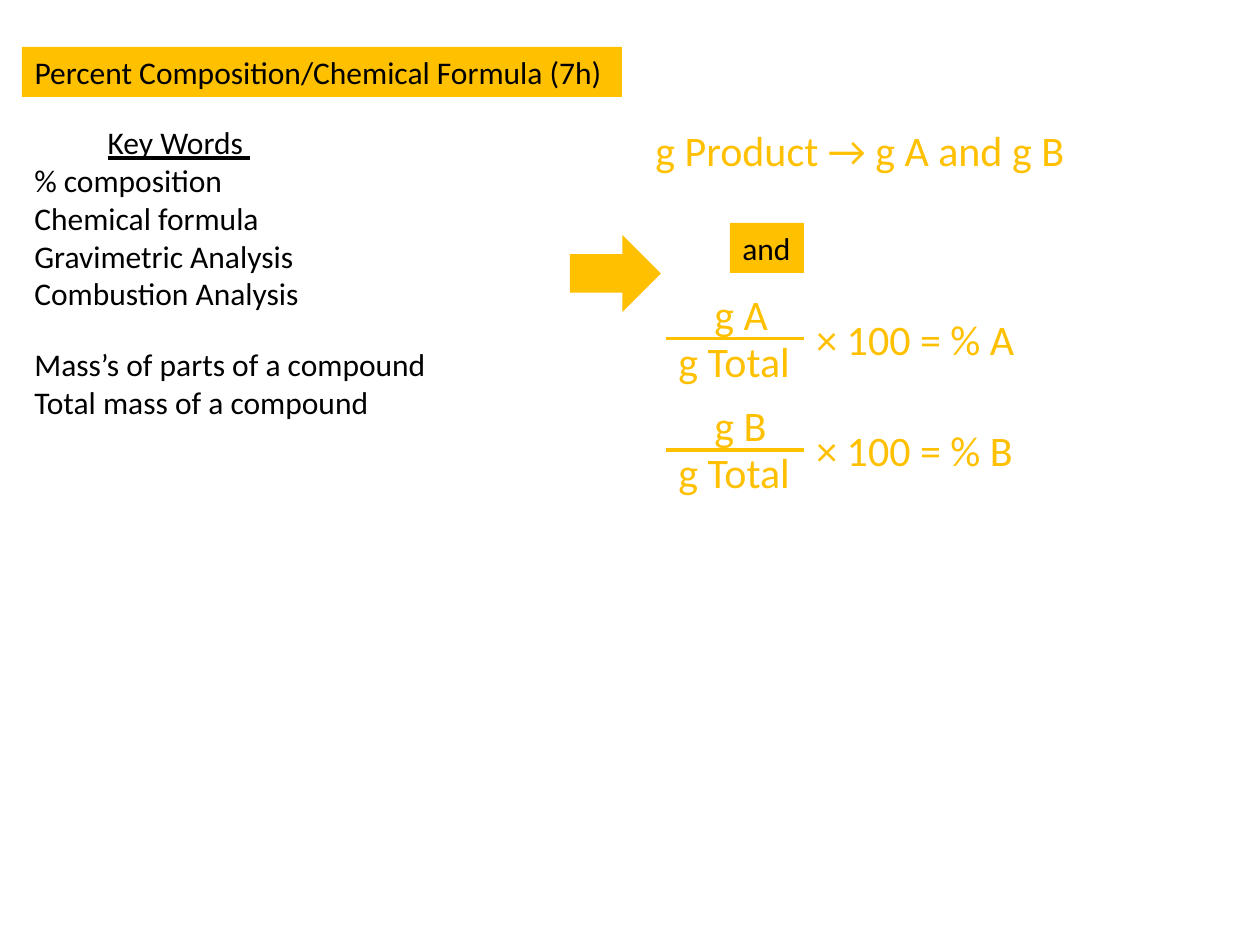
from dataclasses import dataclass

from lxml.etree import SubElement
from pptx import Presentation
from pptx.dml.color import RGBColor
from pptx.enum.shapes import MSO_CONNECTOR, MSO_SHAPE
from pptx.enum.text import MSO_ANCHOR, MSO_AUTO_SIZE, PP_ALIGN
from pptx.oxml.ns import qn
from pptx.shapes.autoshape import Shape
from pptx.slide import Slide
from pptx.util import Emu, Pt

PX_PER_INCH = 126


@dataclass(frozen=True)
class Theme:
    gold: RGBColor = RGBColor(0xFF, 0xC0, 0x00)
    ink: RGBColor = RGBColor(0x00, 0x00, 0x00)
    font: str = "Calibri"
    body: int = 18
    formula: int = 24
    bar: float = 1.75


@dataclass(frozen=True)
class Box:
    left: int
    top: int
    width: int
    height: int

    def emu(self) -> tuple[Emu, ...]:
        return tuple(map(px, (self.left, self.top, self.width, self.height)))


@dataclass(frozen=True)
class Fraction:
    element: str
    bar_y: int


THEME = Theme()
FRACTIONS = [Fraction("A", 339), Fraction("B", 450)]
KEY_WORDS = ["Key Words ", "% composition", "Chemical formula",
             "Gravimetric Analysis", "Combustion Analysis"]
MASSES = ["Mass’s of parts of a compound", "Total mass of a compound"]


def px(length: int) -> Emu:
    return Emu(round(length * 914400 / PX_PER_INCH))


def write(shape: Shape, *lines: str, size: int = THEME.body,
          color: RGBColor = THEME.ink, wrap: bool = False,
          heading: bool = False, grow: bool = True) -> None:
    """Fill a shape with lines; a heading is a centred, underlined first line."""
    frame = shape.text_frame
    frame.text = "\n".join(lines)
    frame.word_wrap = wrap
    frame.auto_size = (MSO_AUTO_SIZE.SHAPE_TO_FIT_TEXT if grow
                       else MSO_AUTO_SIZE.NONE)
    frame.vertical_anchor = MSO_ANCHOR.TOP
    for index, paragraph in enumerate(frame.paragraphs):
        is_heading = heading and index == 0
        paragraph.alignment = PP_ALIGN.CENTER if is_heading else PP_ALIGN.LEFT
        for run in paragraph.runs:
            run.font.name = THEME.font
            run.font.size = Pt(size)
            run.font.color.rgb = color
            run.font.underline = is_heading


def add_text(slide: Slide, box: Box, *lines: str, **style) -> None:
    write(slide.shapes.add_textbox(*box.emu()), *lines, **style)


def add_formula(slide: Slide, box: Box, text: str) -> None:
    add_text(slide, box, text, size=THEME.formula, color=THEME.gold)


def add_gold_shape(slide: Slide, kind: MSO_SHAPE, box: Box) -> Shape:
    shape = slide.shapes.add_shape(kind, *box.emu())
    shape.shadow.inherit = False
    shape.fill.solid()
    shape.fill.fore_color.rgb = THEME.gold
    shape.line.fill.background()
    return shape


def add_title(slide: Slide, box: Box, text: str) -> None:
    title = slide.shapes.title
    title.left, title.top, title.width, title.height = box.emu()
    title.fill.solid()
    title.fill.fore_color.rgb = THEME.gold
    # A growing title would take the layout's minimum height
    write(title, text, wrap=True, grow=False)


def add_fraction(slide: Slide, fraction: Fraction) -> None:
    left, right, y = 666, 804, fraction.bar_y
    add_formula(slide, Box(left, y - 10, right - left, 63), "g Total")
    bar = slide.shapes.add_connector(
        MSO_CONNECTOR.STRAIGHT, px(left), px(y), px(right), px(y))
    bar.line.color.rgb = THEME.gold
    bar.line.width = Pt(THEME.bar)
    SubElement(bar._element.spPr, qn("a:effectLst"))
    add_formula(slide, Box(right, y - 32, 224, 63),
                f"× 100 = % {fraction.element}")
    add_formula(slide, Box(702, y - 57, 79, 63), f"g {fraction.element}")


def main() -> None:
    deck = Presentation()
    deck.slide_width, deck.slide_height = px(1260), px(945)
    slide = deck.slides.add_slide(deck.slide_layouts[5])

    # Title and key words
    add_title(slide, Box(22, 47, 600, 50),
              "Percent Composition/Chemical Formula (7h)")
    add_text(slide, Box(22, 117, 314, 204), *KEY_WORDS, wrap=True, heading=True)
    add_text(slide, Box(22, 339, 421, 89), *MASSES)

    # Arrow to the method
    add_gold_shape(slide, MSO_SHAPE.RIGHT_ARROW, Box(570, 235, 91, 77))

    # Method: product split, then percent of each element
    add_formula(slide, Box(643, 118, 447, 63), "g Product → g A and g B")
    write(add_gold_shape(slide, MSO_SHAPE.RECTANGLE, Box(730, 223, 74, 50)), "and")
    for fraction in FRACTIONS:
        add_fraction(slide, fraction)

    deck.save("out.pptx")


if __name__ == "__main__":
    main()
